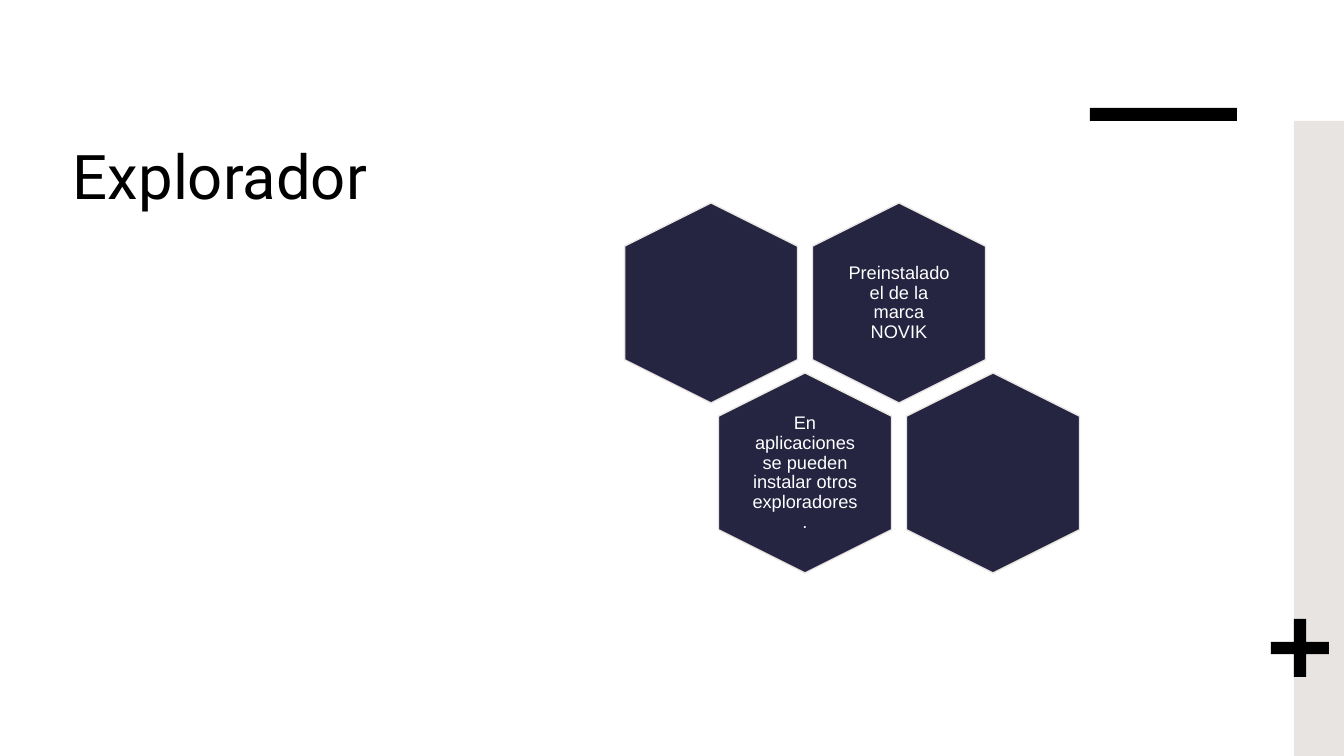
"""Build the "Explorador" slide with its honeycomb of hexagons."""
import pptx
import pptx.dml.color
import pptx.enum.shapes
import pptx.enum.text
import pptx.util

SCALE = 914400 / 100.8
COLORS = {"paper": "FFFFFF", "ink": "000000", "sand": "E8E4E2", "navy": "252441"}
SHAPES = pptx.enum.shapes.MSO_SHAPE
ALIGN = pptx.enum.text.PP_ALIGN
HEXAGON_LENGTH, HEXAGON_BREADTH = 200, 173
LABEL_WIDTH, LABEL_HEIGHT, LABEL_MARGIN = 120, 137, 6
FIRST_X, FIRST_Y = 711, 303
COLUMN_STEP, ROW_STEP, ROW_SHIFT = 188, 170, 94
ROWS = [
    ["", "Preinstalado el de la marca NOVIK"],
    ["En aplicaciones se pueden instalar otros exploradores.", ""],
]


def px(value):
    """Turn pixels into EMU."""
    return pptx.util.Emu(round(value * SCALE))


def color(name):
    """Return the named colour as RGB."""
    return pptx.dml.color.RGBColor.from_string(COLORS[name])


def add_block(slide, kind, left, top, width, height, fill):
    """Add a plain filled shape without an outline."""
    shape = slide.shapes.add_shape(kind, px(left), px(top), px(width), px(height))
    shape.shadow.inherit = False
    shape.fill.solid()
    shape.fill.fore_color.rgb = color(fill)
    shape.line.fill.background()
    return shape


def add_text(slide, text, box, font_name, size, ink, align):
    """Add a wrapped text box holding one paragraph."""
    shape = slide.shapes.add_textbox(*map(px, box))
    text_frame = shape.text_frame
    text_frame.text = text
    text_frame.word_wrap = True
    paragraph = text_frame.paragraphs[0]
    paragraph.alignment = align
    font = paragraph.runs[0].font
    font.name = font_name
    font.size = pptx.util.Pt(size)
    font.color.rgb = color(ink)
    return text_frame


def add_hexagon(slide, center_x, center_y):
    """Add an upright hexagon around a center."""
    left = center_x - HEXAGON_LENGTH / 2
    top = center_y - HEXAGON_BREADTH / 2
    hexagon = add_block(slide, SHAPES.HEXAGON, left, top,
                        HEXAGON_LENGTH, HEXAGON_BREADTH, "navy")
    hexagon.adjustments[0] = 0.25
    hexagon.rotation = 90
    hexagon.line.color.rgb = color("sand")
    hexagon.line.width = pptx.util.Pt(1)


def add_label(slide, text, center_x, center_y):
    """Add centred text around a hexagon's center."""
    box = (center_x - LABEL_WIDTH / 2, center_y - LABEL_HEIGHT / 2,
           LABEL_WIDTH, LABEL_HEIGHT)
    text_frame = add_text(slide, text, box, "Arial", 13, "paper", ALIGN.CENTER)
    text_frame.vertical_anchor = pptx.enum.text.MSO_ANCHOR.MIDDLE
    for side in ("left", "top", "right", "bottom"):
        setattr(text_frame, f"margin_{side}", px(LABEL_MARGIN))
    text_frame.paragraphs[0].line_spacing = 0.9


def add_honeycomb(slide):
    """Add the staggered rows of hexagons and their labels."""
    for row, labels in enumerate(ROWS):
        for column, label in enumerate(labels):
            center_x = FIRST_X + column * COLUMN_STEP + row * ROW_SHIFT
            center_y = FIRST_Y + row * ROW_STEP
            add_hexagon(slide, center_x, center_y)
            if label:
                add_label(slide, label, center_x, center_y)


def main():
    """Build and save the presentation."""
    presentation = pptx.Presentation()
    presentation.slide_width = px(1344)
    presentation.slide_height = px(756)
    slide = presentation.slides.add_slide(presentation.slide_layouts[6])
    slide.background.fill.solid()
    slide.background.fill.fore_color.rgb = color("paper")
    add_text(slide, "Explorador", (63, 133, 353, 444), "Roboto", 44, "ink", ALIGN.LEFT)
    add_block(slide, SHAPES.RECTANGLE, 1294, 121, 50, 635, "sand")
    add_block(slide, SHAPES.RECTANGLE, 1090, 108, 147, 13, "ink")
    plus = add_block(slide, SHAPES.CROSS, 1271, 619, 58, 58, "ink")
    plus.adjustments[0] = 0.395
    add_honeycomb(slide)
    presentation.save("out.pptx")


if __name__ == "__main__":
    main()
